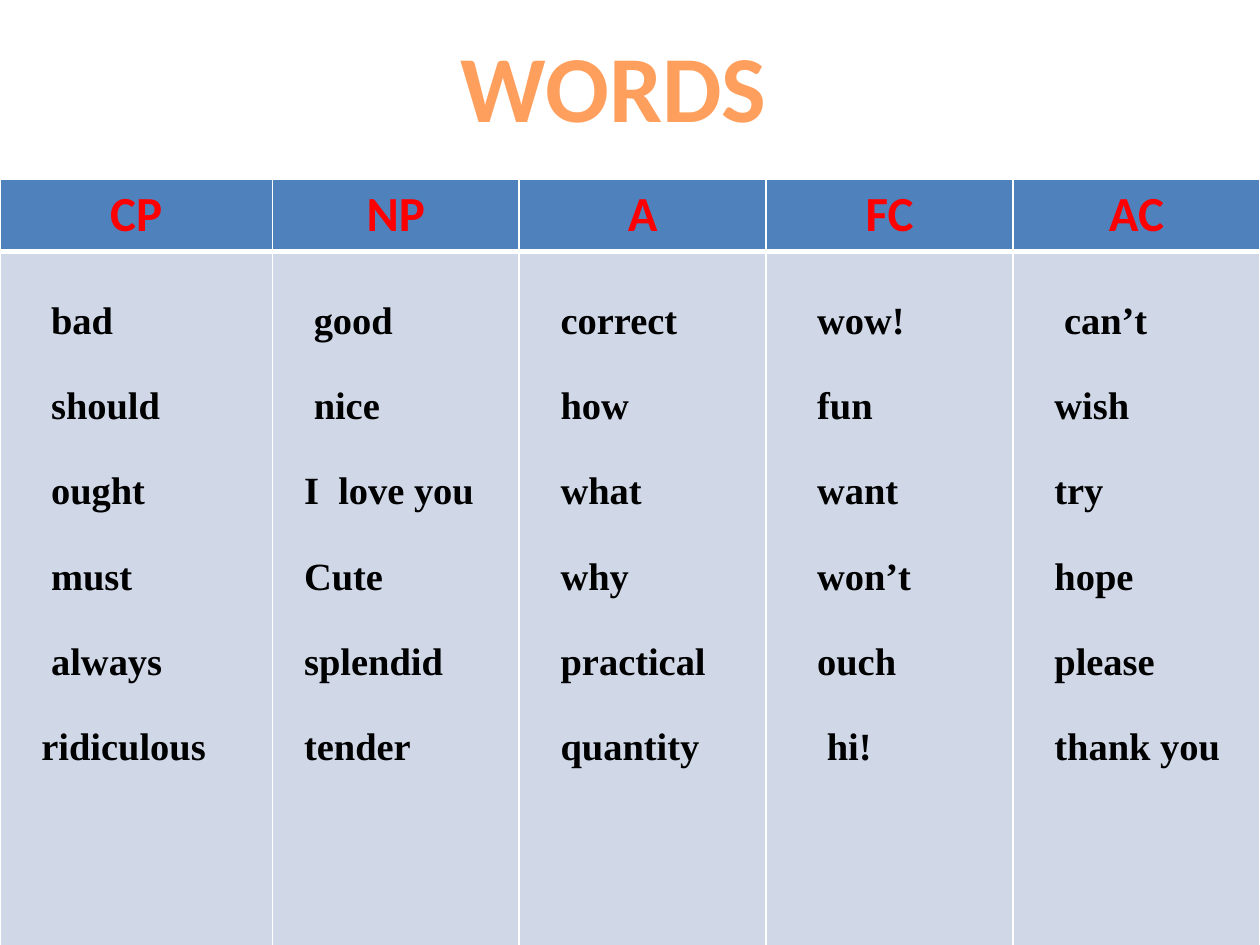
from lxml import etree
from pptx import Presentation
from pptx.dml.color import RGBColor
from pptx.enum.text import MSO_ANCHOR, MSO_AUTO_SIZE, PP_ALIGN
from pptx.oxml.ns import qn
from pptx.util import Pt

CENTER, LEFT = PP_ALIGN.CENTER, PP_ALIGN.LEFT
MIDDLE = MSO_ANCHOR.MIDDLE
NO_FIT = MSO_AUTO_SIZE.NONE

WHITE, RED, BLACK, ORANGE = "FFFFFF", "FF0000", "000000", "FF9F5D"
HEADER_FILL, BODY_FILL = "4F81BD", "D0D8E8"
INDENT_STEP = 5.5

COLUMNS = [
    ("CP", 4, ["bad", "should", "ought", "must", "always", "ridiculous"]),
    ("NP", 2, ["good", "nice", "I  love you", "Cute", "splendid", "tender"]),
    ("A", 3, ["correct", "how", "what", "why", "practical", "quantity"]),
    ("FC", 4, ["wow!", "fun", "want", "won’t", "ouch", "hi!"]),
    ("AC", 3, ["can’t", "wish", "try", "hope", "please", "thank you"]),
]
INDENT_SHIFTS = {"ridiculous": -1, "good": 1, "nice": 1, "hi!": 1, "can’t": 1}
COLUMN_WIDTHS = [155.6] + [141.1] * 4
ROW_HEIGHTS = [39.6, 399]


def color(value):
    return RGBColor.from_string(value)


def write(p, text, *, size, font, fill, align=LEFT, spacing=None, indent=0):
    p.alignment = align
    p.line_spacing = spacing
    if indent:
        pPr = p._p.get_or_add_pPr()
        pPr.set("marL", str(Pt(indent)))
        pPr.set("indent", "0")
    r = p.add_run()
    r.text = text
    r.font.size = Pt(size)
    r.font.name = font
    r.font.bold = True
    r.font.color.rgb = color(fill)


def format_cell(cell, fill, **widths):
    tcPr = cell._tc.get_or_add_tcPr()
    for side in "LRTB":
        ln = etree.SubElement(tcPr, qn(f"a:ln{side}"), w=str(Pt(widths.get(side, 1))))
        solid = etree.SubElement(ln, qn("a:solidFill"))
        etree.SubElement(solid, qn("a:srgbClr"), val=WHITE)
    cell.fill.solid()
    cell.fill.fore_color.rgb = color(fill)


def add_title(s, text):
    sp = s.shapes.title
    sp.left, sp.top, sp.width, sp.height = Pt(203.8), Pt(12.2), Pt(293.8), Pt(72.7)
    tf = sp.text_frame
    tf.auto_size = NO_FIT
    tf.vertical_anchor = MIDDLE
    write(tf.paragraphs[0], text, size=54, font="Calibri", fill=ORANGE, align=CENTER)


def fill_words(cell, words, indent):
    tf = cell.text_frame
    for i, word in enumerate(words):
        p = tf.add_paragraph() if i else tf.paragraphs[0]
        steps = indent + INDENT_SHIFTS.get(word, 0)
        write(p, word, size=22, font="Times New Roman", fill=BLACK,
              spacing=2.0, indent=steps * INDENT_STEP)


def add_word_table(s):
    table = s.shapes.add_table(
        len(ROW_HEIGHTS), len(COLUMNS), Pt(0), Pt(102.2),
        Pt(sum(COLUMN_WIDTHS)), Pt(sum(ROW_HEIGHTS))).table
    for row, height in zip(table.rows, ROW_HEIGHTS):
        row.height = Pt(height)
    for i, (heading, indent, words) in enumerate(COLUMNS):
        table.columns[i].width = Pt(COLUMN_WIDTHS[i])
        header, body = table.cell(0, i), table.cell(1, i)
        format_cell(header, HEADER_FILL, B=3)
        format_cell(body, BODY_FILL, T=3)
        write(header.text_frame.paragraphs[0], heading, size=28,
              font="Calibri", fill=RED, align=CENTER)
        fill_words(body, words, indent)


def main():
    prs = Presentation()
    prs.slide_width, prs.slide_height = Pt(720), Pt(540)
    s = prs.slides.add_slide(prs.slide_layouts[5])
    add_title(s, "WORDS")
    add_word_table(s)
    prs.save("out.pptx")


if __name__ == "__main__":
    main()
